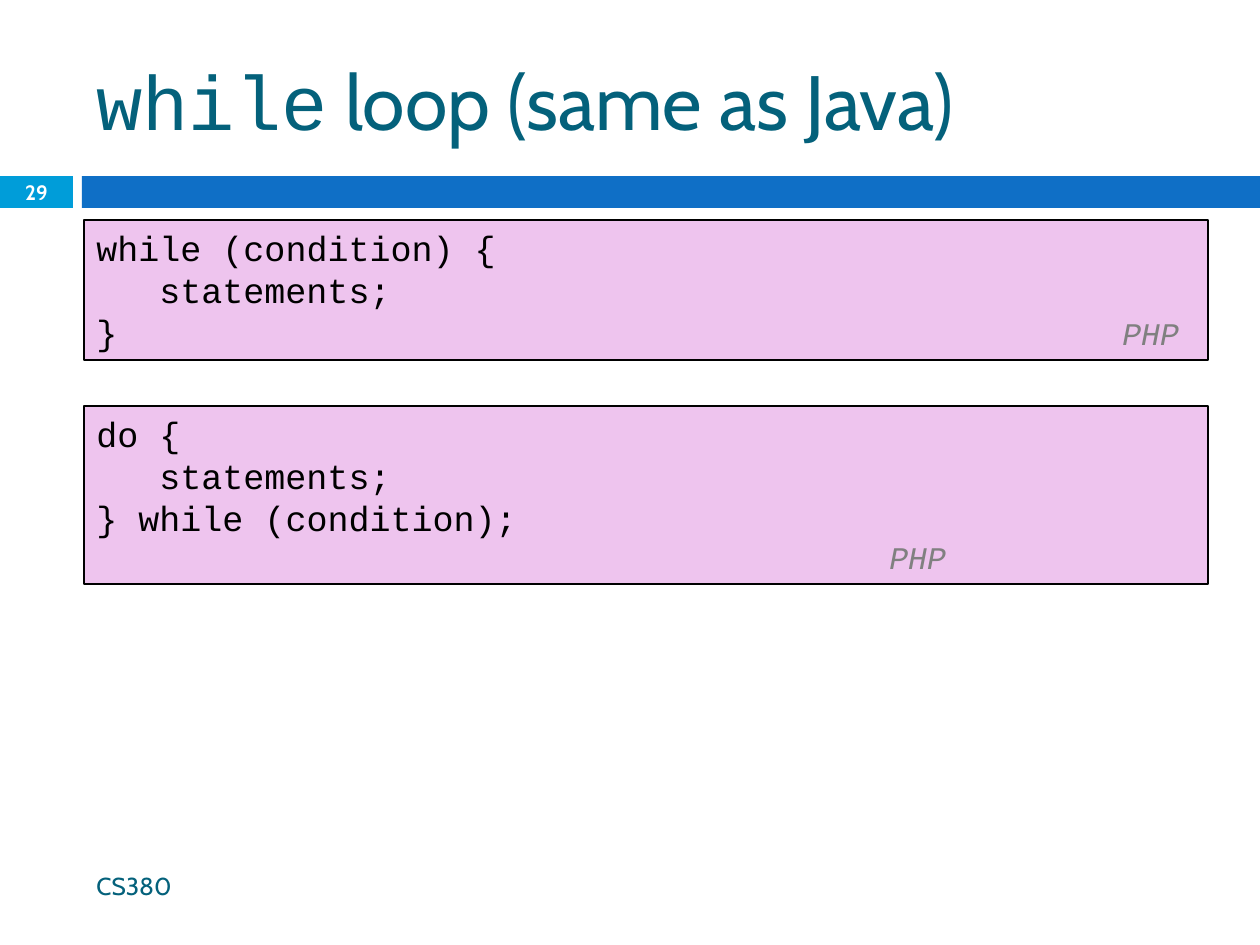
from dataclasses import dataclass

from lxml import etree
from pptx import Presentation
from pptx.dml.color import RGBColor
from pptx.enum.shapes import MSO_SHAPE
from pptx.enum.text import MSO_ANCHOR, MSO_AUTO_SIZE, PP_ALIGN
from pptx.oxml.ns import qn
from pptx.util import Emu, Pt

RECTANGLE = MSO_SHAPE.RECTANGLE
MIDDLE, TOP = MSO_ANCHOR.MIDDLE, MSO_ANCHOR.TOP
LEFT, CENTER = PP_ALIGN.LEFT, PP_ALIGN.CENTER
NO_AUTOFIT = MSO_AUTO_SIZE.NONE
EMU_PER_PX = 914400 / 126
CODE_FONT, BODY_FONT = "Courier New", "Cabin"
COLORS = {
    "badge": "009DD9",
    "band": "0F6FC6",
    "heading": "04617B",
    "code_fill": "EEC4EE",
    "code": "000000",
    "label": "808080",
    "number": "FFFFFF",
}


@dataclass(frozen=True)
class Box:
    left: int
    top: int
    width: int
    height: int


@dataclass(frozen=True)
class CodeBlock:
    box: Box
    lines: tuple[str, ...]
    label: str
    label_offset: int


CODE_BLOCKS = (
    CodeBlock(Box(84, 220, 1124, 140), ("while (condition) {", "\tstatements;", "}"), "PHP", 1026),
    CodeBlock(Box(84, 406, 1124, 178), ("do {", "\tstatements;", "} while (condition);", ""), "PHP", 793),
)


def px(length: int) -> Emu:
    return Emu(round(length * EMU_PER_PX))


def place(box: Box) -> tuple[Emu, Emu, Emu, Emu]:
    return px(box.left), px(box.top), px(box.width), px(box.height)


def color(key: str) -> RGBColor:
    return RGBColor.from_string(COLORS[key])


def style(font, name: str, size: float, color_key: str, bold: bool = False) -> None:
    font.name = name
    font.size = Pt(size)
    font.bold = bold
    font.color.rgb = color(color_key)


def add_rectangle(slide, box: Box, fill_key: str):
    rectangle = slide.shapes.add_shape(RECTANGLE, *place(box))
    rectangle.shadow.inherit = False
    rectangle.fill.solid()
    rectangle.fill.fore_color.rgb = color(fill_key)
    rectangle.line.fill.background()
    return rectangle


def add_title(slide) -> None:
    title = slide.shapes.title
    title.left, title.top, title.width, title.height = place(Box(84, 32, 1124, 136))
    frame = title.text_frame
    frame.auto_size = NO_AUTOFIT
    frame.vertical_anchor = MIDDLE
    heading = frame.paragraphs[0]
    heading.alignment = LEFT
    for text, font_name in (("while", CODE_FONT), (" loop (same as Java)", BODY_FONT)):
        run = heading.add_run()
        run.text = text
        style(run.font, font_name, 44, "heading")


def add_number_band(slide) -> None:
    add_rectangle(slide, Box(82, 176, 1178, 32), "band")
    badge = add_rectangle(slide, Box(0, 176, 73, 32), "badge")
    frame = badge.text_frame
    frame.margin_top = frame.margin_bottom = 0
    frame.vertical_anchor = MIDDLE
    number = frame.paragraphs[0]
    number.text = "29"
    number.alignment = CENTER
    style(number.font, BODY_FONT, 11.9, "number", bold=True)


def add_tab_stop(paragraph, offset: int) -> None:
    properties = paragraph._p.get_or_add_pPr()
    tabs = etree.Element(qn("a:tabLst"))
    etree.SubElement(tabs, qn("a:tab"), pos=str(px(offset)), algn="l")
    properties.insert(0, tabs)


def add_code_block(slide, block: CodeBlock) -> None:
    panel = add_rectangle(slide, block.box, "code_fill")
    panel.line.color.rgb = color("code")
    panel.line.width = Pt(1.5)
    frame = panel.text_frame
    frame.word_wrap = True
    frame.vertical_anchor = TOP
    for index, text in enumerate(block.lines):
        line = frame.add_paragraph() if index else frame.paragraphs[0]
        line.alignment = LEFT
        if text:
            line.add_run().text = text
        style(line.font, CODE_FONT, 20, "code")
    add_tab_stop(line, block.label_offset)
    label = line.add_run()
    label.text = f"\t{block.label}"
    label.font.size = Pt(18)
    label.font.italic = True
    label.font.color.rgb = color("label")


def add_footer(slide) -> None:
    frame = slide.shapes.add_textbox(*place(Box(84, 861, 747, 50))).text_frame
    frame.word_wrap = True
    frame.vertical_anchor = MIDDLE
    course = frame.paragraphs[0]
    course.text = "CS380"
    style(course.font, BODY_FONT, 14, "heading")


def main() -> None:
    presentation = Presentation()
    presentation.slide_width, presentation.slide_height = px(1260), px(945)
    slide = presentation.slides.add_slide(presentation.slide_layouts[5])
    add_title(slide)
    add_number_band(slide)
    for block in CODE_BLOCKS:
        add_code_block(slide, block)
    add_footer(slide)
    presentation.save("out.pptx")


if __name__ == "__main__":
    main()
